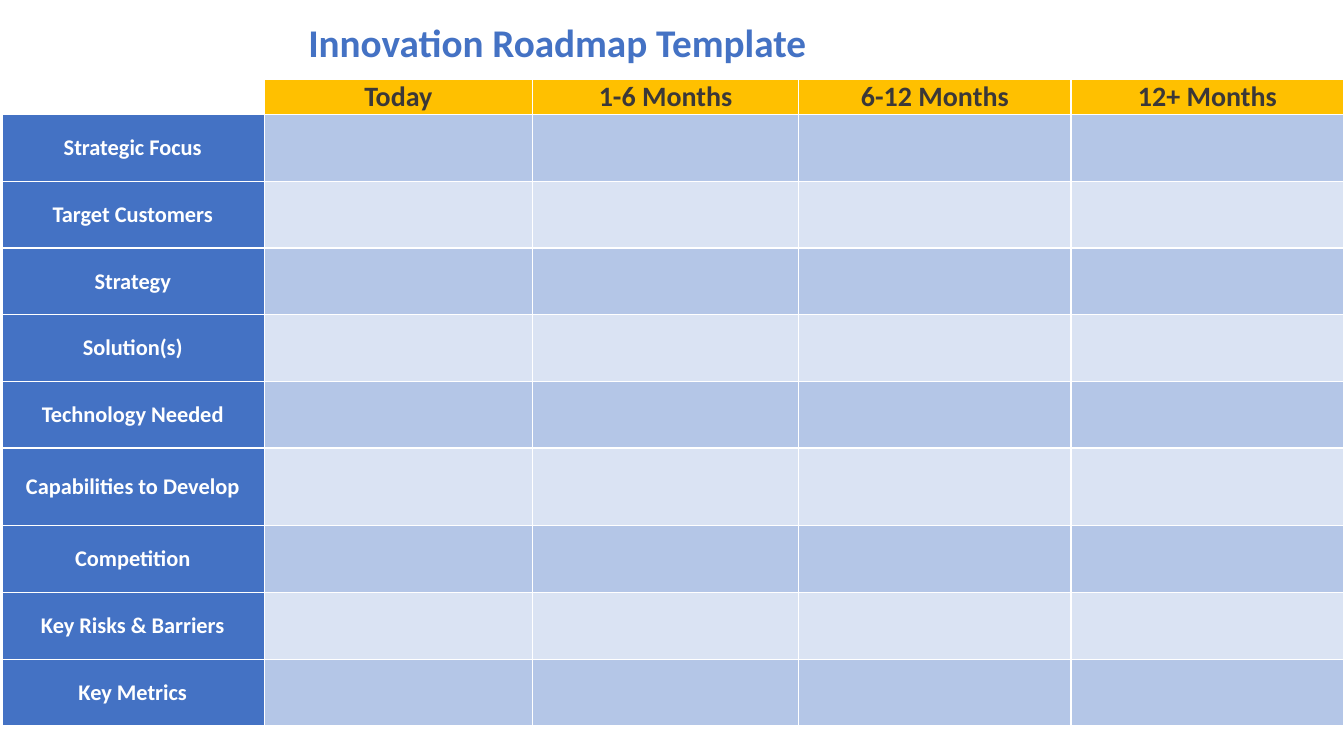
from lxml.etree import SubElement as Sub
from pptx import Presentation
from pptx.dml.color import RGBColor as Color
from pptx.enum.text import MSO_ANCHOR as Anchor, PP_ALIGN as Align
from pptx.oxml.ns import qn
from pptx.util import Cm, Pt

BLUE, GOLD, DARK, WHITE = "4472C4", "FFC000", "3B3838", "FFFFFF"
BANDS = ["B4C6E7", "DAE3F3"]

TIMES = ["Today", "1-6 Months", "6-12 Months", "12+ Months"]
TOPICS = ["Strategic Focus", "Target Customers", "Strategy", "Solution(s)",
          "Technology Needed", "Capabilities to Develop", "Competition",
          "Key Risks & Barriers", "Key Metrics"]
WIDTHS = [6.63, 6.76, 6.71, 6.86, 6.88]
HEAD, ROW, TALL = 0.91, 1.68, 1.96
HEIGHTS = [HEAD] + [TALL if topic == "Capabilities to Develop" else ROW
                    for topic in TOPICS]


def paint(code):
    return Color.from_string(code)


def write(frame, text, size=16, color=WHITE, align=Align.CENTER, font="Calibri"):
    para = frame.paragraphs[0]
    para.alignment = align
    run = para.add_run()
    run.text = text
    run.font.name, run.font.size, run.font.bold = font, Pt(size), True
    run.font.color.rgb = paint(color)
    return para


class Board:
    def __init__(self, deck):
        self.slide = deck.slides.add_slide(deck.slide_layouts[6])
        self.thin, self.thick, self.edge = 1, 2.25, WHITE

    def title(self, text, left, top, width, height):
        box = self.slide.shapes.add_textbox(Cm(left), Cm(top), Cm(width), Cm(height))
        frame = box.text_frame
        frame.word_wrap = True
        frame.vertical_anchor = Anchor.MIDDLE
        write(frame, text, size=28, color=BLUE, align=Align.LEFT).line_spacing = 0.9

    def border(self, cell, sides):
        """Draw the cell edges; sides maps L, R, T, B in that order to points."""
        props = cell._tc.get_or_add_tcPr()
        for side, width in sides.items():
            line = Sub(props, qn(f"a:ln{side}"), w=str(Pt(width)))
            fill = Sub(line, qn("a:solidFill"))
            Sub(fill, qn("a:srgbClr"), val=self.edge)

    def cell(self, cell, fill, sides, text="", **style):
        cell.margin_top = cell.margin_bottom = 0
        cell.vertical_anchor = Anchor.MIDDLE
        self.border(cell, sides)
        if fill:
            cell.fill.solid()
            cell.fill.fore_color.rgb = paint(fill)
        else:
            cell.fill.background()
        if text:
            write(cell.text_frame, text, **style)

    def grid(self, left, top):
        frame = self.slide.shapes.add_table(
            len(HEIGHTS), len(WIDTHS), Cm(left), Cm(top),
            Cm(sum(WIDTHS)), Cm(sum(HEIGHTS)))
        table = frame.table
        table.first_row = table.horz_banding = False
        for col, width in zip(table.columns, WIDTHS):
            col.width = Cm(width)
        for row, height in zip(table.rows, HEIGHTS):
            row.height = Cm(height)
        last = len(WIDTHS) - 1
        for r in range(len(HEIGHTS)):
            for c in range(len(WIDTHS)):
                sides = {"L": self.thin if c else self.thick,
                         "R": self.thick if c == last else self.thin,
                         "T": self.thin if r else self.thick,
                         "B": self.thin}
                spot = table.cell(r, c)
                if r and c:
                    self.cell(spot, BANDS[(r - 1) % 2], sides)
                elif r:
                    self.cell(spot, BLUE, sides, TOPICS[r - 1])
                elif c:
                    self.cell(spot, GOLD, sides, TIMES[c - 1], size=20, color=DARK)
                else:
                    self.cell(spot, None, sides)


def main():
    deck = Presentation()
    deck.slide_width, deck.slide_height = Cm(33.87), Cm(19.05)
    board = Board(deck)
    board.title("Innovation Roadmap Template", 7.52, 0.38, 26.09, 1.52)
    board.grid(0.03, 1.98)
    deck.save("out.pptx")


if __name__ == "__main__":
    main()
